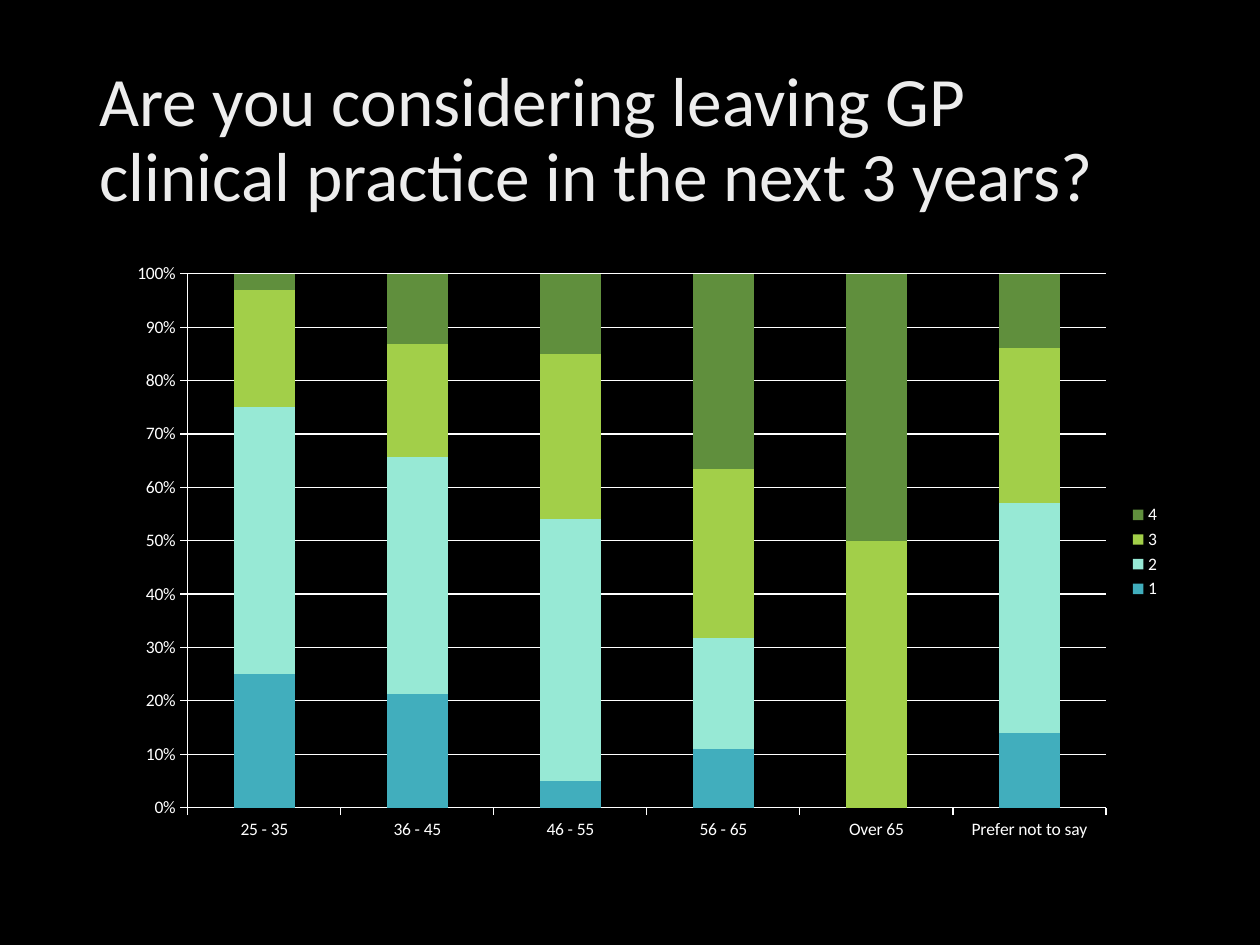
import pptx
import pptx.chart.data
import pptx.dml.color
import pptx.enum.chart
import pptx.enum.text
import pptx.util
from pptx.util import Cm, Pt

TITLE = "Are you considering leaving GP clinical practice in the next 3 years?"
AGE_GROUPS = ["25 - 35", "36 - 45", "46 - 55", "56 - 65", "Over 65", "Prefer not to say"]
ANSWERS = [
    ("1", "41AEBD", [25, 21, 5, 11, None, 14]),
    ("2", "97E9D5", [50, 44, 49, 21, None, 43]),
    ("3", "A2CF49", [22, 21, 31, 32, 50, 29]),
    ("4", "608F3D", [3, 13, 15, 37, 50, 14]),
]
TITLE_FONT = {"name": "Calibri", "size": Pt(39.6)}
CHART_FONT = {"name": "Calibri", "size": Pt(10)}
TITLE_PLACE = {"left": Cm(1.75), "top": Cm(1.02), "width": Cm(21.9), "height": Cm(3.68)}
CHART_PLACE = (Cm(2.34), Cm(5.08), Cm(21.31), Cm(12.09))


def set_values(target, values):
    for name, value in values.items():
        setattr(target, name, value)


def paint(fill, color):
    fill.solid()
    fill.fore_color.rgb = pptx.dml.color.RGBColor.from_string(color)


def add_title(page):
    box = page.shapes.title
    set_values(box, TITLE_PLACE)
    frame = box.text_frame
    frame.text = TITLE
    set_values(frame, {
        "word_wrap": True,
        "auto_size": pptx.enum.text.MSO_AUTO_SIZE.NONE,
        "vertical_anchor": pptx.enum.text.MSO_ANCHOR.MIDDLE,
    })
    para = frame.paragraphs[0]
    set_values(para, {"alignment": pptx.enum.text.PP_ALIGN.LEFT, "line_spacing": 0.9})
    span = para.runs[0]
    set_values(span.font, TITLE_FONT)
    paint(span.font.fill, "EDEDED")


def add_answer_chart(page):
    data = pptx.chart.data.CategoryChartData()
    data.categories = AGE_GROUPS
    for name, color, values in ANSWERS:
        data.add_series(name, values)
    chart = page.shapes.add_chart(
        pptx.enum.chart.XL_CHART_TYPE.COLUMN_STACKED_100, *CHART_PLACE, data
    ).chart
    set_values(chart, {"has_title": False, "has_legend": True})
    set_values(chart.font, CHART_FONT)
    paint(chart.font.fill, "FFFFFF")
    set_values(chart.legend, {
        "position": pptx.enum.chart.XL_LEGEND_POSITION.RIGHT,
        "include_in_layout": False,
    })

    plot = chart.plots[0]
    set_values(plot, {"gap_width": 150, "overlap": 100, "vary_by_categories": False})
    for series, (name, color, values) in zip(plot.series, ANSWERS):
        paint(series.format.fill, color)

    value_axis = chart.value_axis
    set_values(value_axis, {
        "minimum_scale": 0,
        "maximum_scale": 1,
        "major_unit": 0.1,
        "has_major_gridlines": True,
    })
    set_values(value_axis.tick_labels, {"number_format": "0%", "number_format_is_linked": False})
    for axis in (chart.category_axis, value_axis):
        axis.major_tick_mark = pptx.enum.chart.XL_TICK_MARK.OUTSIDE
    for part in (chart.category_axis, value_axis, value_axis.major_gridlines):
        part.format.line.width = Pt(0.75)
        paint(part.format.line.fill, "FFFFFF")


def main():
    deck = pptx.Presentation()
    set_values(deck, {"slide_width": Cm(25.4), "slide_height": Cm(19.05)})
    page = deck.slides.add_slide(deck.slide_layouts.get_by_name("Title Only"))
    paint(page.background.fill, "000000")
    add_title(page)
    add_answer_chart(page)
    deck.save("out.pptx")


if __name__ == "__main__":
    main()
